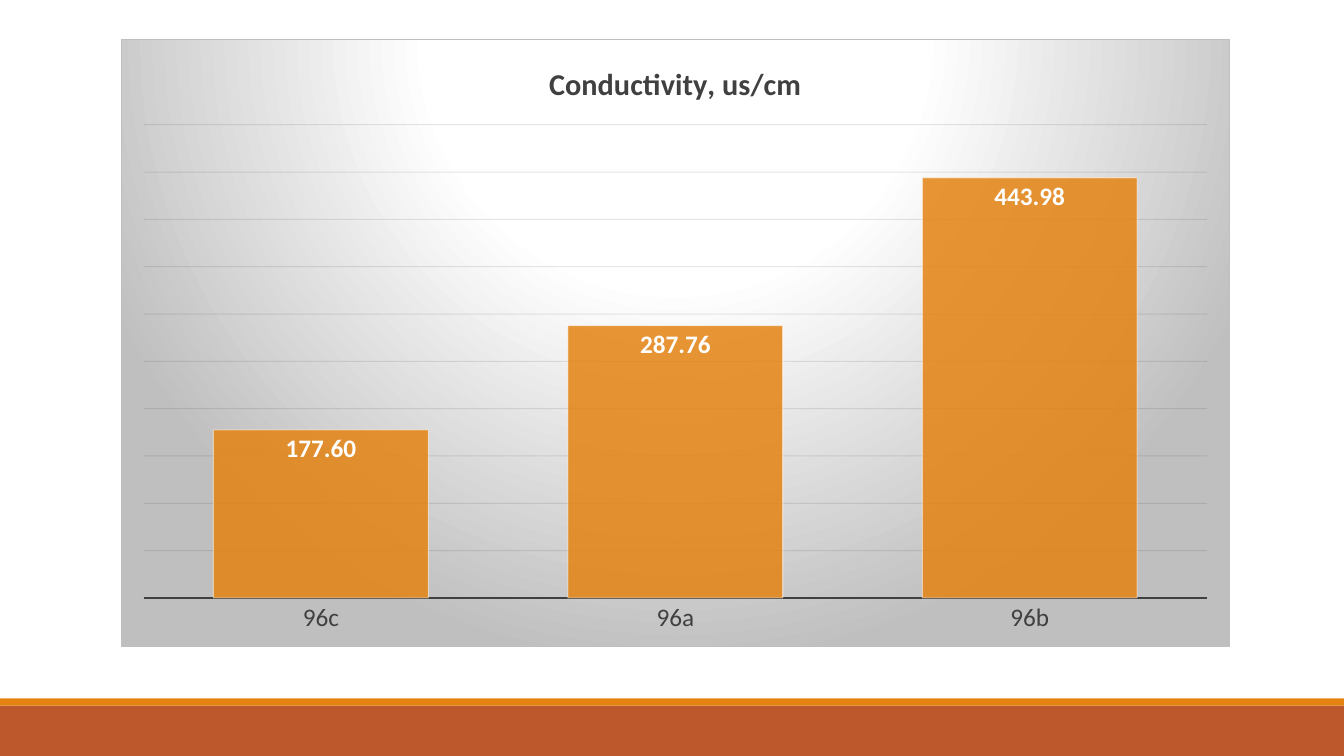
"""Build a slide with a conductivity column chart above a two-colour footer."""
from dataclasses import dataclass
from typing import Any

from lxml.etree import SubElement
from pptx import Presentation
from pptx.chart.chart import Chart
from pptx.chart.data import CategoryChartData
from pptx.dml.color import RGBColor
from pptx.enum.chart import XL_CHART_TYPE, XL_LABEL_POSITION, XL_TICK_LABEL_POSITION, XL_TICK_MARK
from pptx.enum.shapes import MSO_SHAPE
from pptx.oxml import parse_xml
from pptx.oxml.ns import nsdecls, qn
from pptx.util import Inches, Pt


@dataclass(frozen=True)
class Theme:
    """Colours, font and type sizes of the slide."""
    rust: str = "BD582C"
    orange: str = "E48312"
    white: str = "FFFFFF"
    silver: str = "BFBFBF"
    charcoal: str = "404040"
    ink: str = "0D0D0D"
    font: str = "Calibri"
    title_size: float = 21.6
    label_size: float = 18


@dataclass(frozen=True)
class Area:
    """A rectangle in columns and rows of the slide grid."""
    column: float
    row: float
    columns: float
    rows: float


@dataclass(frozen=True)
class Band:
    """A filled footer strip."""
    area: Area
    colour: str


THEME = Theme()
WIDTH, HEIGHT = Inches(13.33), Inches(7.5)
COLUMNS, ROWS = 40, 30
BANDS = (
    Band(Area(0, 28, COLUMNS, 2), THEME.rust),
    Band(Area(0, 27.72, COLUMNS, 0.28), THEME.orange),
)
CHART_AREA = Area(3.6, 1.56, 33, 24.12)
PLOT_SHARES = {"x": 0.02, "y": 0.14, "w": 0.96, "h": 0.78}
TITLE = "Conductivity, us/cm"
READINGS = {"96c": 177.6, "96a": 287.76, "96b": 443.98}
NUMBER_FORMAT = "#,##0.00"


def place(area: Area) -> tuple[int, int, int, int]:
    """Turn a grid area into left, top, width and height."""
    column, row = WIDTH / COLUMNS, HEIGHT / ROWS
    return (round(area.column * column), round(area.row * row),
            round(area.columns * column), round(area.rows * row))


def apply(target: Any, formats: dict[str, Any]) -> None:
    """Set each named attribute of the target."""
    for name, value in formats.items():
        setattr(target, name, value)


def style_font(font: Any, size: float, colour: str, bold: bool = False) -> None:
    """Format a font in the theme typeface."""
    apply(font, {"name": THEME.font, "size": Pt(size), "bold": bold})
    font.color.rgb = RGBColor.from_string(colour)


def style_line(line: Any, colour: str, width: float) -> None:
    """Give a line its colour and width in points."""
    line.color.rgb = RGBColor.from_string(colour)
    line.width = Pt(width)


def set_opacity(element: Any, *percentages: int) -> None:
    """Make the colours in an element partly transparent, in order."""
    for colour, percentage in zip(element.iter(qn("a:srgbClr")), percentages):
        SubElement(colour, qn("a:alpha"), val=str(percentage * 1000))


def add_band(slide: Any, band: Band) -> None:
    """Draw one footer strip."""
    shape = slide.shapes.add_shape(MSO_SHAPE.RECTANGLE, *place(band.area))
    shape.shadow.inherit = False
    shape.fill.solid()
    shape.fill.fore_color.rgb = RGBColor.from_string(band.colour)
    shape.line.fill.background()


def style_background(chart: Chart) -> None:
    """Fill the chart area with a radial gradient and fix the plot area."""
    stops = "".join(
        f'<a:gs pos="{position * 1000}"><a:srgbClr val="{colour}"/></a:gs>'
        for position, colour in ((0, THEME.white), (39, THEME.white), (100, THEME.silver)))
    chart_element = chart._chartSpace.find(qn("c:chart"))
    chart_element.addnext(parse_xml(
        f'<c:spPr {nsdecls("c", "a")}><a:gradFill><a:gsLst>{stops}</a:gsLst>'
        '<a:path path="circle"><a:fillToRect l="50000" t="-80000" r="50000" b="180000"/></a:path>'
        f'</a:gradFill><a:ln w="{Pt(0.75)}"><a:solidFill><a:srgbClr val="{THEME.silver}"/>'
        '</a:solidFill></a:ln></c:spPr>'))
    plot_area = chart_element.find(qn("c:plotArea"))
    for layout in plot_area.findall(qn("c:layout")):
        plot_area.remove(layout)
    shares = "".join(f'<c:{name} val="{share}"/>' for name, share in PLOT_SHARES.items())
    plot_area.insert(0, parse_xml(
        f'<c:layout {nsdecls("c")}><c:manualLayout><c:layoutTarget val="inner"/>'
        f'<c:xMode val="edge"/><c:yMode val="edge"/>{shares}</c:manualLayout></c:layout>'))


def style_axes(chart: Chart) -> None:
    """Format the category axis and the hidden value axis with its gridlines."""
    category_axis, value_axis = chart.category_axis, chart.value_axis
    apply(category_axis, {"major_tick_mark": XL_TICK_MARK.NONE,
                          "minor_tick_mark": XL_TICK_MARK.NONE,
                          "tick_label_position": XL_TICK_LABEL_POSITION.NEXT_TO_AXIS})
    style_font(category_axis.tick_labels.font, THEME.label_size, THEME.charcoal)
    style_line(category_axis.format.line, THEME.charcoal, 1.5)
    apply(value_axis, {"visible": False, "has_major_gridlines": True, "minimum_scale": 0,
                       "maximum_scale": 500, "major_unit": 50})
    apply(value_axis.tick_labels, {"number_format": NUMBER_FORMAT,
                                   "number_format_is_linked": False})
    style_line(value_axis.major_gridlines.format.line, THEME.ink, 0.75)
    set_opacity(value_axis._element.find(qn("c:majorGridlines")), 10)


def style_columns(chart: Chart) -> None:
    """Format the columns and their value labels."""
    plot = chart.plots[0]
    apply(plot, {"gap_width": 65, "vary_by_categories": False})
    series = plot.series[0]
    series.format.fill.solid()
    series.format.fill.fore_color.rgb = RGBColor.from_string(THEME.orange)
    style_line(series.format.line, THEME.white, 0.75)
    set_opacity(series._element.find(qn("c:spPr")), 85, 50)
    apply(series.data_labels, {"show_value": True, "position": XL_LABEL_POSITION.INSIDE_END,
                               "number_format": NUMBER_FORMAT, "number_format_is_linked": False})
    style_font(series.data_labels.font, THEME.label_size, THEME.white, bold=True)


def add_conductivity_chart(slide: Any) -> None:
    """Add the column chart with its title."""
    data = CategoryChartData(number_format=NUMBER_FORMAT)
    data.categories = list(READINGS)
    data.add_series(TITLE, list(READINGS.values()))
    chart = slide.shapes.add_chart(
        XL_CHART_TYPE.COLUMN_CLUSTERED, *place(CHART_AREA), data).chart
    apply(chart, {"has_legend": False, "has_title": True})
    style_font(chart.font, THEME.label_size, "000000")
    title_frame = chart.chart_title.text_frame
    title_frame.text = TITLE
    style_font(title_frame.paragraphs[0].runs[0].font, THEME.title_size, THEME.charcoal, bold=True)
    chart.chart_title.include_in_layout = False
    style_background(chart)
    style_axes(chart)
    style_columns(chart)


def main() -> None:
    """Create and save the presentation."""
    presentation = Presentation()
    apply(presentation, {"slide_width": WIDTH, "slide_height": HEIGHT})
    slide = presentation.slides.add_slide(presentation.slide_layouts[6])
    for band in BANDS:
        add_band(slide, band)
    add_conductivity_chart(slide)
    presentation.save("out.pptx")


if __name__ == "__main__":
    main()
